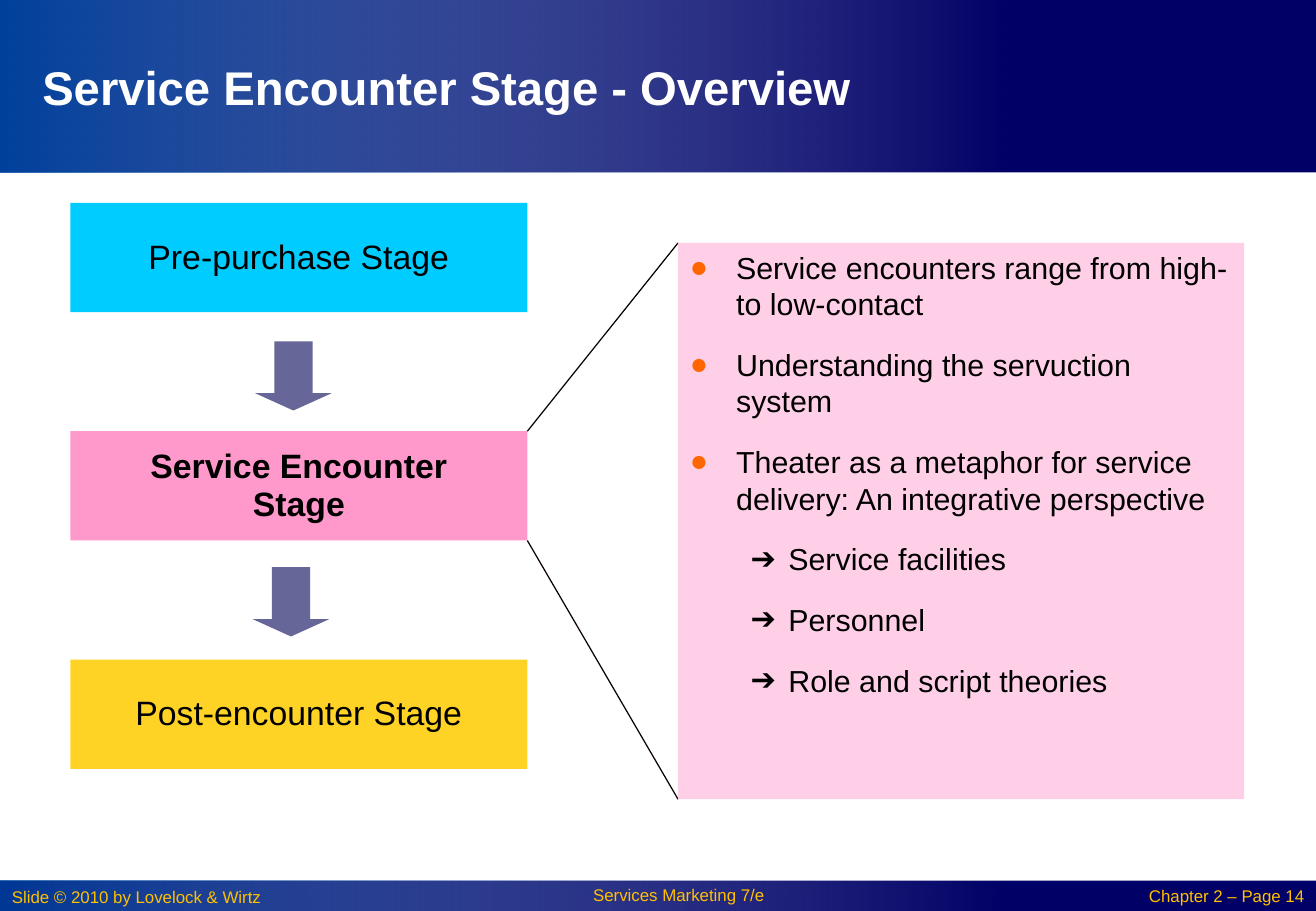
from lxml import etree
from pptx import Presentation
from pptx.dml.color import RGBColor
from pptx.enum.shapes import MSO_CONNECTOR, MSO_SHAPE as SHAPE
from pptx.enum.text import MSO_ANCHOR as ANCHOR, PP_ALIGN as ALIGN
from pptx.oxml.ns import qn
from pptx.util import Inches, Pt

NAVY = RGBColor(0x00, 0x00, 0x66)
BLUE = RGBColor(0x01, 0x52, 0xAB)
WHITE = RGBColor(0xFF, 0xFF, 0xFF)
BLACK = RGBColor(0x00, 0x00, 0x00)
GOLD = RGBColor(0xFF, 0xC0, 0x00)
CYAN = RGBColor(0x00, 0xCC, 0xFF)
PINK = RGBColor(0xFF, 0x99, 0xCC)
YELLOW = RGBColor(0xFF, 0xCC, 0x00)
PALE_PINK = RGBColor(0xFF, 0xC1, 0xE0)
SLATE = RGBColor(0x66, 0x66, 0x99)
ORANGE = RGBColor(0xFF, 0x66, 0x00)
LINE = RGBColor(0x0C, 0x03, 0x00)

SLIDE_W = 10.83
STAGE_X, STAGE_W, STAGE_H = 0.58, 3.76, 0.9
STAGE_TOP, STAGE_STEP = 1.67, 1.88
DETAIL_X, DETAIL_Y, DETAIL_W, DETAIL_H = 5.58, 2, 4.66, 4.58

STAGES = [
    ("Pre-purchase Stage", CYAN, 100, False),
    ("Service Encounter Stage", PINK, 100, True),
    ("Post-encounter Stage", YELLOW, 85, False),
]
DETAILS = [
    (0, "Service encounters range from high- to low-contact"),
    (0, "Understanding the servuction system"),
    (0, "Theater as a metaphor for service delivery: An integrative perspective"),
    (1, "Service facilities"),
    (1, "Personnel"),
    (1, "Role and script theories"),
]
# Per level: bullet, bullet colour, left margin, hanging indent
BULLETS = [("●", ORANGE, 0.38, 0.38), ("➔", BLACK, 0.81, 0.31)]


def set_alpha(sp, *percents):
    """Give the fill colours of a shape, in order, their opacity."""
    for clr, percent in zip(sp._element.spPr.iter(qn("a:srgbClr")), percents):
        etree.SubElement(clr, qn("a:alpha"), val=str(percent * 1000))


def add_box(slide, x, y, w, h, color, alpha=100, kind=SHAPE.RECTANGLE):
    sp = slide.shapes.add_shape(kind, Inches(x), Inches(y), Inches(w), Inches(h))
    sp.shadow.inherit = False
    sp.line.fill.background()
    sp.fill.solid()
    sp.fill.fore_color.rgb = color
    if alpha < 100:
        set_alpha(sp, alpha)
    return sp


def add_band(slide, y, h, alpha):
    """Navy band with a blue glow fading out to the right."""
    add_box(slide, 0, y, SLIDE_W, h, NAVY)
    glow = add_box(slide, 0, y, 8.33, h, BLUE)
    glow.fill.gradient()
    glow.fill.gradient_angle = 0
    for stop, color, position in zip(glow.fill.gradient_stops, (BLUE, WHITE), (0, 1)):
        stop.color.rgb = color
        stop.position = position
    set_alpha(glow, alpha, 0)


def write(p, text, size=18, color=BLACK, bold=False, align=ALIGN.LEFT, spacing=None):
    p.alignment = align
    p.line_spacing = spacing
    r = p.add_run()
    r.text = text
    r.font.name = "Arial"
    r.font.size = Pt(size)
    r.font.bold = bold
    r.font.color.rgb = color


def add_text(slide, x, y, w, h, text, anchor=ANCHOR.TOP, **fmt):
    tf = slide.shapes.add_textbox(Inches(x), Inches(y), Inches(w), Inches(h)).text_frame
    tf.word_wrap = True
    tf.vertical_anchor = anchor
    write(tf.paragraphs[0], text, **fmt)


def add_stage(slide, y, text, color, alpha, bold):
    tf = add_box(slide, STAGE_X, y, STAGE_W, STAGE_H, color, alpha).text_frame
    tf.word_wrap = True
    tf.vertical_anchor = ANCHOR.MIDDLE
    tf.margin_left = tf.margin_right = Inches(0.37)
    write(tf.paragraphs[0], text, size=20, bold=bold, align=ALIGN.CENTER, spacing=0.95)


def add_arrow(slide, x, y):
    sp = add_box(slide, x, y, 0.63, 0.57, SLATE, kind=SHAPE.DOWN_ARROW)
    sp.adjustments[0], sp.adjustments[1] = 0.5, 0.25


def add_line(slide, x1, y1, x2, y2):
    line = slide.shapes.add_connector(
        MSO_CONNECTOR.STRAIGHT, Inches(x1), Inches(y1), Inches(x2), Inches(y2))
    line.line.color.rgb = LINE
    line.line.width = Pt(0.75)
    etree.SubElement(line._element.spPr, qn("a:effectLst"))


def set_bullet(p, level):
    char, color, margin, hang = BULLETS[level]
    p.level = level
    pPr = p._p.get_or_add_pPr()
    pPr.set("marL", str(Inches(margin)))
    pPr.set("indent", str(-Inches(hang)))
    clr = etree.SubElement(pPr, qn("a:buClr"))
    etree.SubElement(clr, qn("a:srgbClr"), val=str(color))
    etree.SubElement(pPr, qn("a:buFont"), typeface="Arial")
    etree.SubElement(pPr, qn("a:buChar"), char=char)


def add_details(slide):
    tf = add_box(slide, DETAIL_X, DETAIL_Y, DETAIL_W, DETAIL_H, PALE_PINK, 76).text_frame
    tf.word_wrap = True
    tf.vertical_anchor = ANCHOR.TOP
    for i, (level, text) in enumerate(DETAILS):
        p = tf.add_paragraph() if i else tf.paragraphs[0]
        set_bullet(p, level)
        if i:
            p.space_before = Pt(14.4)
        write(p, text)


def main():
    prs = Presentation()
    prs.slide_width, prs.slide_height = Inches(SLIDE_W), Inches(7.5)
    slide = prs.slides.add_slide(prs.slide_layouts[6])

    add_band(slide, 7.25, 0.25, 69)
    add_band(slide, 0, 1.42, 80)
    add_text(slide, 0, 7.25, 2.58, 0.28, "Slide © 2010 by Lovelock & Wirtz",
             size=10, color=GOLD)
    add_text(slide, 4.25, 7.25, 2.67, 0.25, "Services Marketing 7/e",
             size=10, color=GOLD, align=ALIGN.CENTER, spacing=0.9)
    add_text(slide, 9.08, 7.26, 1.75, 0.25, "Chapter 2 – Page 14",
             size=10, color=GOLD, align=ALIGN.RIGHT, spacing=0.9)
    add_text(slide, 0.25, 0.25, 7, 0.92, "Service Encounter Stage - Overview",
             anchor=ANCHOR.MIDDLE, size=28, color=WHITE, bold=True)

    for i, stage in enumerate(STAGES):
        add_stage(slide, STAGE_TOP + i * STAGE_STEP, *stage)
    add_arrow(slide, 2.1, 2.81)
    add_arrow(slide, 2.08, 4.67)

    stage_right, encounter_top = STAGE_X + STAGE_W, STAGE_TOP + STAGE_STEP
    add_line(slide, stage_right, encounter_top, DETAIL_X, DETAIL_Y)
    add_line(slide, stage_right, encounter_top + STAGE_H, DETAIL_X, DETAIL_Y + DETAIL_H)
    add_details(slide)

    prs.save("out.pptx")


if __name__ == "__main__":
    main()
